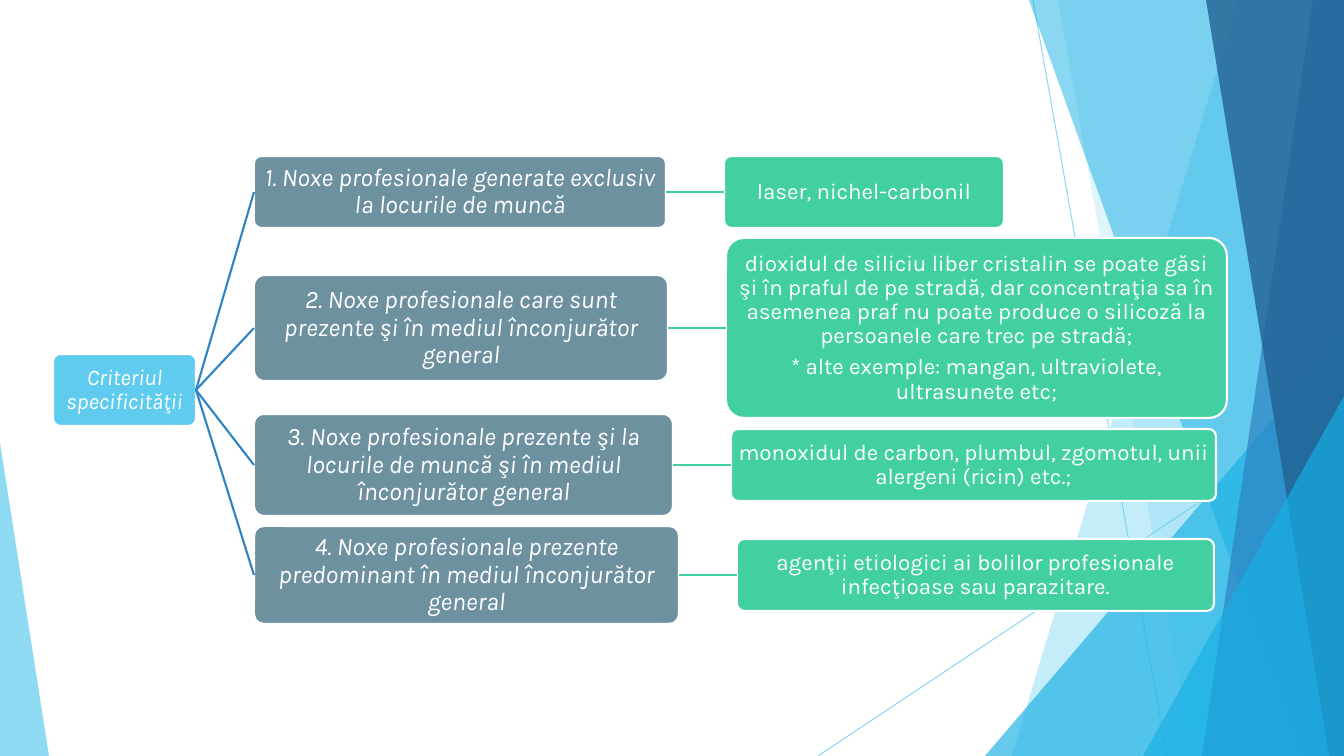
from lxml import etree
from pptx import Presentation
from pptx.dml.color import RGBColor
from pptx.enum.shapes import MSO_CONNECTOR, MSO_SHAPE
from pptx.enum.text import MSO_ANCHOR, PP_ALIGN
from pptx.oxml.ns import qn
from pptx.util import Emu, Pt

STRAIGHT = MSO_CONNECTOR.STRAIGHT
ROUNDED, TRIANGLE = MSO_SHAPE.ROUNDED_RECTANGLE, MSO_SHAPE.ISOSCELES_TRIANGLE
MIDDLE, CENTER = MSO_ANCHOR.MIDDLE, PP_ALIGN.CENTER
LEFT_SIDE, RIGHT_SIDE = 1, 3


class Theme:
    font = "Karla"
    white, sky, cyan = "FFFFFF", "5FCBEF", "17B0E4"
    blue, navy = "2E83C3", "226292"
    slate, green = "6E91A0", "42D0A2"
    topic_size, small_size = 18, 16
    space_after = 5
    outline, hairline = 1.5, 0.75
    corner = 0.1


# Content: each row is (middle y, topic, topic size, examples, examples size)
CRITERION = "Criteriul specificităţii"
ROWS = [
    (192, "1. Noxe profesionale generate exclusiv la locurile de muncă", (412, 72),
     ["laser, nichel-carbonil"], (280, 72)),
    (328, "2. Noxe profesionale care sunt prezente şi în mediul înconjurător general", (414, 106),
     ["dioxidul de siliciu liber cristalin se poate găsi şi în praful de pe stradă, "
      "dar concentraţia sa în asemenea praf nu poate produce o silicoză la "
      "persoanele care trec pe stradă;",
      "* alte exemple: mangan, ultraviolete, ultrasunete etc;"], (501, 180)),
    (465, "3. Noxe profesionale prezente şi la locurile de muncă şi în mediul "
          "înconjurător general", (419, 102),
     ["monoxidul de carbon, plumbul, zgomotul, unii alergeni (ricin) etc.;"], (485, 72)),
    (575, "4. Noxe profesionale prezente predominant în mediul înconjurător general", (425, 98),
     ["agenţii etiologici ai bolilor profesionale infecţioase sau parazitare."], (477, 72)),
]

# Layout in px
PX = 914400 / 100.8
WIDTH, HEIGHT = 1344, 756
CRITERION_LEFT, CRITERION_MIDDLE, CRITERION_SIZE = 53, 390, (143, 72)
COLUMN_GAP = 58

# Backdrop, back to front
RAYS = [((1033, 0), (1167, HEIGHT)), ((WIDTH, 406), (818, HEIGHT))]
# Sheets run to the right edge: (top left x, bottom left x)
# Wedges are triangles: (left, top, apex position), with the width beside them
BACKDROP = [
    ("sheet", (1238, 1012), Theme.sky, 36),
    ("sheet", (1058, 1192), Theme.sky, 20),
    ("wedge", (985, 336, 359, 1), Theme.cyan, 66),
    ("sheet", (1029, 1301), Theme.cyan, 50),
    ("sheet", (1313, 1202), Theme.blue, 70),
    ("sheet", (1206, 1329), Theme.navy, 80),
    ("wedge", (1143, 396, 201, 1), Theme.cyan, 66),
    ("wedge", (0, 443, 49, 0), Theme.sky, 70),
]


def px(*lengths):
    return [Emu(round(length * PX)) for length in lengths]


def set_opacity(shape, percent):
    for color in shape.element.spPr.iter(qn("a:srgbClr")):
        etree.SubElement(color, qn("a:alpha")).set("val", str(percent * 1000))


def paint(shape, color):
    shape.shadow.inherit = False
    shape.fill.solid()
    shape.fill.fore_color.rgb = RGBColor.from_string(color)


def add_line(slide, start, end, color, width):
    line = slide.shapes.add_connector(STRAIGHT, *px(*start, *end))
    line.line.color.rgb = RGBColor.from_string(color)
    line.line.width = Pt(width)
    etree.SubElement(line.element.spPr, qn("a:effectLst"))
    return line


def link(slide, source, target, color):
    """Join the right side of source to the left side of target."""
    line = add_line(slide, (0, 0), (0, 0), color, Theme.outline)
    line.begin_connect(source, RIGHT_SIDE)
    line.end_connect(target, LEFT_SIDE)


def add_backdrop(slide):
    for start, end in RAYS:
        set_opacity(add_line(slide, start, end, Theme.sky, Theme.hairline), 70)
    for kind, geometry, color, opacity in BACKDROP:
        if kind == "sheet":
            top_left, bottom_left = geometry
            outline = slide.shapes.build_freeform(top_left, 0, scale=PX)
            outline.add_line_segments(
                [(WIDTH, 0), (WIDTH, HEIGHT), (bottom_left, HEIGHT)], close=True)
            facet = outline.convert_to_shape()
        else:
            left, top, width, apex = geometry
            facet = slide.shapes.add_shape(TRIANGLE, *px(left, top, width, HEIGHT - top))
            facet.adjustments[0] = apex
        paint(facet, color)
        facet.line.fill.background()
        set_opacity(facet, opacity)


def add_box(slide, left, middle, size, paragraphs, color, font_size, italic):
    width, height = size
    box = slide.shapes.add_shape(ROUNDED, *px(left, middle - height / 2, width, height))
    box.adjustments[0] = Theme.corner
    paint(box, color)
    box.line.color.rgb = RGBColor.from_string(Theme.white)
    box.line.width = Pt(Theme.outline)

    frame = box.text_frame
    frame.word_wrap = True
    frame.vertical_anchor = MIDDLE
    inset, = px(1 + round(0.03 * height))
    frame.margin_left = frame.margin_right = inset
    frame.margin_top = frame.margin_bottom = inset
    for index, text in enumerate(paragraphs):
        paragraph = frame.add_paragraph() if index else frame.paragraphs[0]
        paragraph.text = text
        paragraph.alignment = CENTER
        paragraph.line_spacing = 0.9
        paragraph.space_after = Pt(Theme.space_after)
        paragraph.font.name = Theme.font
        paragraph.font.size = Pt(font_size)
        paragraph.font.italic = italic
        paragraph.font.color.rgb = RGBColor.from_string(Theme.white)
    return box


def add_tree(slide):
    criterion = add_box(slide, CRITERION_LEFT, CRITERION_MIDDLE, CRITERION_SIZE,
                        [CRITERION], Theme.sky, Theme.small_size, True)
    topic_left = CRITERION_LEFT + CRITERION_SIZE[0] + COLUMN_GAP
    for middle, topic_text, topic_size, example_texts, example_size in ROWS:
        example_left = topic_left + topic_size[0] + COLUMN_GAP
        topic = add_box(slide, topic_left, middle, topic_size, [topic_text],
                        Theme.slate, Theme.topic_size, True)
        examples = add_box(slide, example_left, middle, example_size, example_texts,
                           Theme.green, Theme.small_size, False)
        link(slide, criterion, topic, Theme.blue)
        link(slide, topic, examples, Theme.green)


def main():
    presentation = Presentation()
    presentation.slide_width, presentation.slide_height = px(WIDTH, HEIGHT)
    slide = presentation.slides.add_slide(presentation.slide_layouts[6])
    add_backdrop(slide)
    add_tree(slide)
    presentation.save("out.pptx")


if __name__ == "__main__":
    main()
